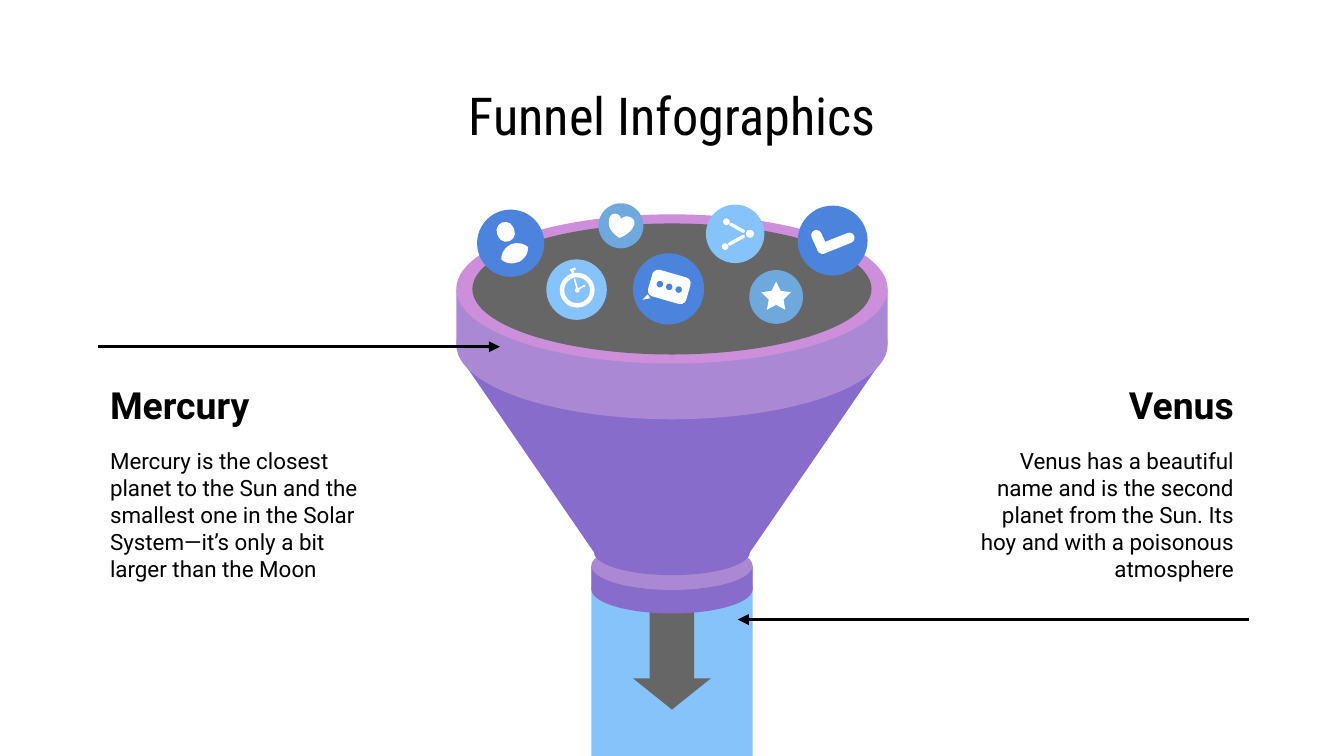
from math import atan2, cos, degrees, hypot, pi, sin

from lxml import etree
from pptx import Presentation
from pptx.dml.color import RGBColor
from pptx.enum.shapes import MSO_CONNECTOR as Connector, MSO_SHAPE as Shape
from pptx.enum.text import MSO_ANCHOR as Anchor, MSO_AUTO_SIZE as AutoSize, PP_ALIGN as Align
from pptx.oxml.ns import qn
from pptx.util import Inches, Pt

SLIDE_WIDTH = Inches(10)
SLIDE_HEIGHT = SLIDE_WIDTH * 9 // 16
COLUMNS = 100
ROWS = COLUMNS * SLIDE_HEIGHT / SLIDE_WIDTH
CENTER = COLUMNS / 2

WHITE, BLACK, GRAY = "FFFFFF", "000000", "666666"
BLUE, SKY, STEEL = "4C84DD", "85C3FA", "6FA8DC"
VIOLET, LILAC, ORCHID = "886CCC", "AB88D3", "CD8FDB"

HEART = [(45.8, 15.9), (45.5, 15.9), (45.3, 16.1), (45.3, 16.5),
         (45.2, 17.2), (46.1, 17.7), (46.1, 17.7),
         (46.1, 17.7), (47, 17.4), (47.2, 16.7),
         (47.3, 16.3), (46.9, 16.1), (46.6, 16.1),
         (46.5, 16.1), (46.3, 16.2), (46.2, 16.3),
         (46.2, 16.1), (46, 15.9), (45.8, 15.9)]
TORSO = [(38.5, 18.1), (38.4, 18.1), (38.2, 18.1), (38, 18.2),
         (37.6, 18.4), (37.3, 18.8), (37.3, 19.3),
         (37.5, 19.5), (37.8, 19.6), (38.1, 19.6),
         (38.3, 19.6), (38.5, 19.5), (38.6, 19.5),
         (39, 19.3), (39.3, 18.9), (39.3, 18.4),
         (39.1, 18.2), (38.8, 18.1), (38.5, 18.1)]


def grid(cells):
    """Convert grid cells to slide units."""
    return round(cells * SLIDE_WIDTH / COLUMNS)


def color(hex_code):
    """Turn a hex string into a colour."""
    return RGBColor.from_string(hex_code)


def paint(shape, fill):
    """Give a shape a flat fill without outline or shadow."""
    shape.fill.solid()
    shape.fill.fore_color.rgb = color(fill)
    shape.line.fill.background()
    shape.shadow.inherit = False


def add_preset(slide, kind, x, y, width, height, fill, adjust=(), rotation=0):
    """Draw a preset shape centred on a grid point."""
    shape = slide.shapes.add_shape(kind, grid(x - width / 2), grid(y - height / 2),
                                   grid(width), grid(height))
    for index, value in enumerate(adjust):
        shape.adjustments[index] = value
    shape.rotation = rotation
    paint(shape, fill)


def add_disc(slide, x, y, size, fill):
    """Draw a circle centred on a grid point."""
    add_preset(slide, Shape.OVAL, x, y, size, size, fill)


def add_stroke(slide, start, end, thickness, fill=WHITE):
    """Draw a round-ended bar between two grid points."""
    (x1, y1), (x2, y2) = start, end
    length = hypot(x2 - x1, y2 - y1) + thickness
    add_preset(slide, Shape.ROUNDED_RECTANGLE, (x1 + x2) / 2, (y1 + y2) / 2, length,
               thickness, fill, [0.5], degrees(atan2(y2 - y1, x2 - x1)))


def add_outline(slide, points, fill):
    """Draw a closed outline through grid points."""
    corners = [(grid(x), grid(y)) for x, y in points]
    builder = slide.shapes.build_freeform(*corners[0], scale=1.0)
    builder.add_line_segments(corners[1:], close=True)
    paint(builder.convert_to_shape(), fill)


def trace_curve(knots, steps=8):
    """List points along a chain of cubic curves."""
    points = [knots[0]]
    for first in range(0, len(knots) - 1, 3):
        segment = knots[first:first + 4]
        for step in range(1, steps + 1):
            t = step / steps
            weights = ((1 - t) ** 3, 3 * t * (1 - t) ** 2, 3 * t * t * (1 - t), t ** 3)
            points.append(tuple(sum(w * knot[axis] for w, knot in zip(weights, segment))
                                for axis in (0, 1)))
    return points


def add_cylinder(slide, top, depth, width, height, side, lid):
    """Draw a cylinder whose lid is centred on the funnel axis."""
    add_preset(slide, Shape.OVAL, CENTER, top + depth, width, height, side)
    add_preset(slide, Shape.RECTANGLE, CENTER, top + depth / 2, width, depth, side)
    add_preset(slide, Shape.OVAL, CENTER, top, width, height, lid)


def add_funnel(slide):
    """Draw the funnel with its pipe and outflow arrow."""
    pipe_top = 42.1
    add_preset(slide, Shape.RECTANGLE, CENTER, (pipe_top + ROWS) / 2, 12,
               ROWS - pipe_top, SKY)
    add_preset(slide, Shape.DOWN_ARROW, CENTER, 46.3, 5.8, 13, GRAY, [0.57, 0.4])
    add_cylinder(slide, pipe_top, 1.75, 12, 3.6, VIOLET, LILAC)
    spout = [(CENTER - 5.8 * cos(pi * step / 24), 41.1 + 1.7 * sin(pi * step / 24))
             for step in range(25)]
    add_outline(slide, [(34.1, 26.4), *spout, (65.9, 26.4)], VIOLET)
    add_cylinder(slide, 21.5, 4.15, 32.1, 11.1, LILAC, ORCHID)
    add_preset(slide, Shape.OVAL, CENTER, 21.5, 29.7, 9.75, GRAY)


def add_person(slide):
    """Draw the person icon."""
    add_disc(slide, 38, 18.1, 5, BLUE)
    add_preset(slide, Shape.ROUNDED_RECTANGLE, 37.63, 17.25, 1.3, 1.5, WHITE, [0.5], -22)
    add_outline(slide, trace_curve(TORSO), WHITE)


def add_stopwatch(slide):
    """Draw the stopwatch icon."""
    add_disc(slide, 42.9, 21.55, 4.5, SKY)
    add_preset(slide, Shape.DONUT, 42.95, 21.6, 2.6, 2.6, WHITE, [0.13])
    add_disc(slide, 42.95, 21.6, 0.35, WHITE)
    add_stroke(slide, (42.75, 20.8), (42.95, 21.5), 0.12)
    add_stroke(slide, (42.95, 21.55), (43.5, 21.25), 0.12)
    add_stroke(slide, (42.5, 20.1), (42.75, 20), 0.18)
    add_stroke(slide, (42.6, 20.2), (42.65, 20.4), 0.2)


def add_check(slide):
    """Draw the check mark icon."""
    add_disc(slide, 61.95, 17.9, 5.2, BLUE)
    corner = (61.2, 18.5)
    for tip in ((60.75, 17.5), (63.2, 17.7)):
        add_stroke(slide, corner, tip, 0.78)


def add_heart(slide):
    """Draw the heart icon."""
    add_disc(slide, 46.2, 16.8, 3.35, STEEL)
    add_outline(slide, trace_curve(HEART), WHITE)


def add_share(slide):
    """Draw the share icon."""
    add_disc(slide, 54.7, 17.4, 4.35, SKY)
    for x, y, size in ((54.05, 16.5, 0.5), (55.8, 17.4, 0.6), (53.95, 18.35, 0.5)):
        add_disc(slide, x, y, size, WHITE)
    add_stroke(slide, (54.4, 16.7), (55.3, 17.2), 0.25)
    add_stroke(slide, (54.3, 18.15), (55.3, 17.6), 0.25)


def add_chat(slide):
    """Draw the speech bubble icon."""
    add_disc(slide, 49.75, 21.5, 5.3, BLUE)
    add_preset(slide, Shape.ROUNDED_RECTANGLE, 49.8, 21.35, 2.95, 2.05, WHITE, [0.22], 16)
    add_outline(slide, [(48.2, 21.9), (47.8, 22.3), (48.4, 22.2)], WHITE)
    for dot in (-1, 0, 1):
        add_disc(slide, 49.8 + 0.7 * dot, 21.35 + 0.2 * dot, 0.48, BLUE)


def add_star(slide):
    """Draw the star icon."""
    add_disc(slide, 57.75, 22.1, 4, STEEL)
    add_preset(slide, Shape.STAR_5_POINT, 57.75, 22, 2.2, 2.1, WHITE, [0.25])


def write(box, text, size, font, align, bold=False, anchor=Anchor.MIDDLE):
    """Fill a text frame with one formatted paragraph."""
    frame = box.text_frame
    frame.word_wrap, frame.auto_size, frame.vertical_anchor = True, AutoSize.NONE, anchor
    frame.margin_left = frame.margin_right = grid(1)
    frame.margin_top = frame.margin_bottom = grid(1)
    paragraph = frame.paragraphs[0]
    paragraph.text, paragraph.alignment = text, align
    paragraph.font.size, paragraph.font.name = Pt(size), font
    paragraph.font.bold, paragraph.font.color.rgb = bold, color(BLACK)


def add_planet(slide, left, align, name, description):
    """Write a planet's heading and description."""
    heading = slide.shapes.add_textbox(grid(left), grid(27.6), grid(22.1), grid(5))
    write(heading, name, 20, "Roboto", align, bold=True)
    body = slide.shapes.add_textbox(grid(left), grid(32.3), grid(22.1), grid(11.6))
    write(body, description, 12, "Roboto", align, anchor=Anchor.TOP)


def add_pointer(slide, start, end, row):
    """Draw a horizontal arrow along a grid row."""
    pointer = slide.shapes.add_connector(Connector.STRAIGHT, grid(start), grid(row),
                                         grid(end), grid(row))
    pointer.line.color.rgb = color(BLACK)
    pointer.line.width = Pt(1.5)
    etree.SubElement(pointer.line._get_or_add_ln(), qn("a:tailEnd"), type="triangle")
    etree.SubElement(pointer._element.spPr, qn("a:effectLst"))


def main():
    """Build the funnel slide."""
    deck = Presentation()
    deck.slide_width, deck.slide_height = SLIDE_WIDTH, SLIDE_HEIGHT
    slide = deck.slides.add_slide(deck.slide_layouts[5])
    title = slide.shapes.title
    title.left, title.top, title.width, title.height = map(grid, (31.25, 5.9, 37.5, 5.3))
    write(title, "Funnel Infographics", 28, "Roboto Condensed", Align.CENTER)
    add_funnel(slide)
    add_planet(slide, 7.2, Align.LEFT, "Mercury",
               "Mercury is the closest planet to the Sun and the smallest one in the "
               "Solar System—it’s only a bit larger than the Moon")
    add_planet(slide, 70.7, Align.RIGHT, "Venus",
               "Venus has a beautiful name and is the second planet from the Sun. "
               "Its hoy and with a poisonous atmosphere")
    add_pointer(slide, 7.3, 37.2, 25.8)
    add_pointer(slide, 92.9, 54.9, 46.1)
    for add_icon in (add_person, add_stopwatch, add_check, add_heart, add_share,
                     add_chat, add_star):
        add_icon(slide)
    deck.save("out.pptx")


if __name__ == "__main__":
    main()
